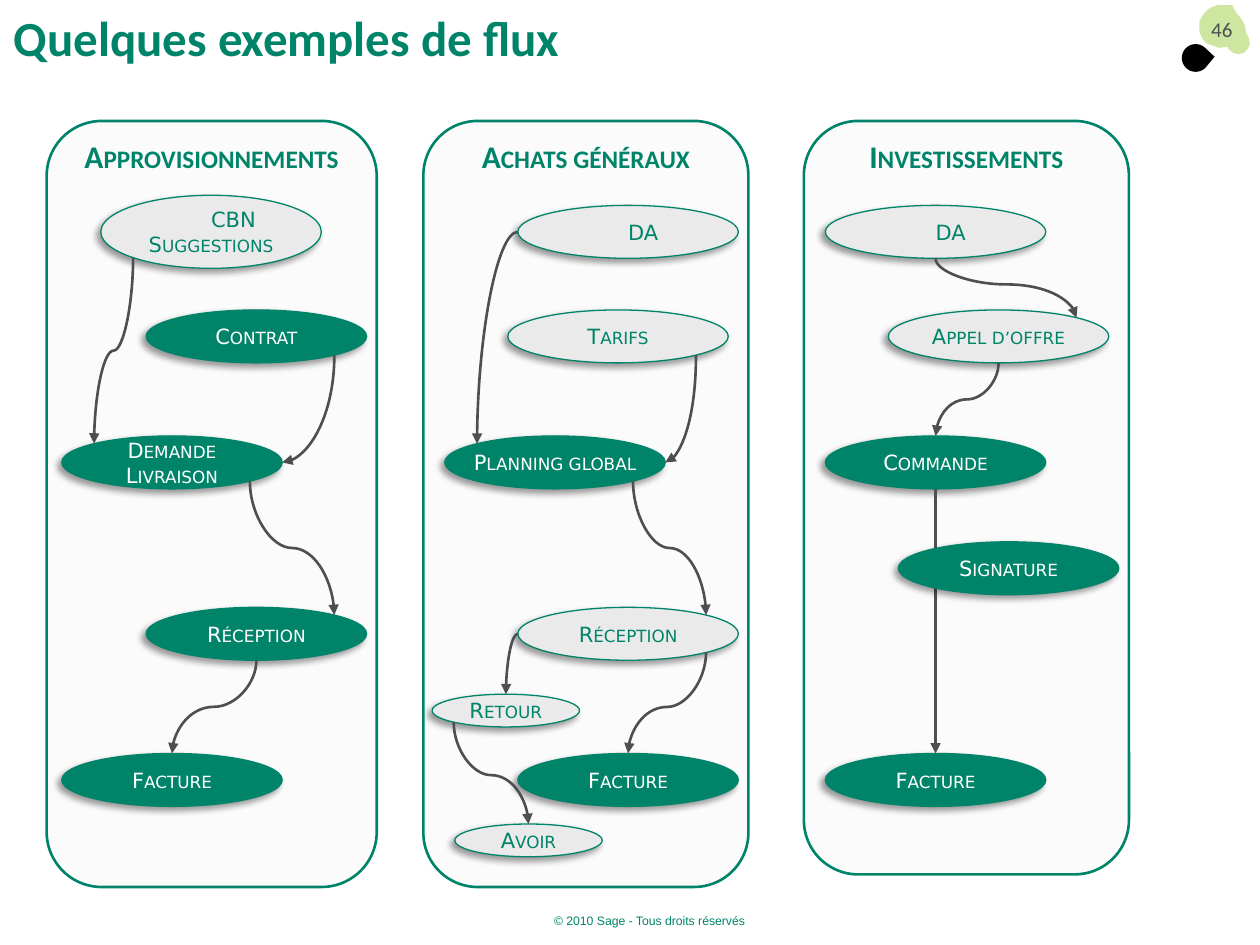
from math import cos, pi, sin, sqrt

from pptx import Presentation
from pptx.dml.color import RGBColor
from pptx.enum.shapes import MSO_CONNECTOR, MSO_SHAPE
from pptx.enum.text import MSO_ANCHOR, MSO_AUTO_SIZE, PP_ALIGN
from pptx.oxml import parse_xml
from pptx.oxml.ns import nsdecls, qn
from pptx.oxml.xmlchemy import OxmlElement
from pptx.util import Inches, Pt

COLORS = {"green": "008469", "slate": "4D4F53", "light": "EAEAEA",
          "lime": "CDE6A0", "white": "FFFFFF", "black": "000000"}
NODE_SIZE, SMALL_SIZE = (1.75, 0.42), (1.17, 0.26)
PANEL_TOP = 0.96

# Connection sites of an ellipse: index and direction from its centre
D = sqrt(0.5)
SITES = {"top": (0, 0, -1), "top left": (1, -D, -D), "left": (2, -1, 0),
         "bottom left": (3, -D, D), "bottom": (4, 0, 1),
         "bottom right": (5, D, D), "right": (6, 1, 0), "top right": (7, D, -D)}

# Panels: (left, width, height), steps (text, left, top, filled, size)
# and arrows (from, site, to, site, bend)
FLOWS = {
    "Approvisionnements": {
        "frame": (0.37, 2.62, 6.08),
        "steps": [("CBN\nSuggestions", 0.8, 1.55, False, (1.75, 0.58)),
                  ("Contrat", 1.16, 2.46, True, NODE_SIZE),
                  ("Demande\nLivraison", 0.49, 3.46, True, NODE_SIZE),
                  ("Réception", 1.16, 4.82, True, NODE_SIZE),
                  ("Facture", 0.49, 5.98, True, NODE_SIZE)],
        "arrows": [("Contrat", "bottom right", "Demande\nLivraison", "right", 0.5),
                   ("CBN\nSuggestions", "bottom left", "Demande\nLivraison", "top left", 0.5),
                   ("Demande\nLivraison", "bottom right", "Réception", "top right", 0.5),
                   ("Réception", "bottom", "Facture", "top", 0.5)],
    },
    "Achats généraux": {
        "frame": (3.36, 2.58, 6.08),
        "steps": [("DA", 4.11, 1.63, False, NODE_SIZE),
                  ("Tarifs", 4.03, 2.46, False, NODE_SIZE),
                  ("Planning global", 3.53, 3.46, True, NODE_SIZE),
                  ("Réception", 4.11, 4.82, False, NODE_SIZE),
                  ("Retour", 3.43, 5.51, False, SMALL_SIZE),
                  ("Facture", 4.11, 5.98, True, NODE_SIZE),
                  ("Avoir", 3.61, 6.54, False, SMALL_SIZE)],
        "arrows": [("DA", "left", "Planning global", "top left", 0.5),
                   ("Tarifs", "bottom right", "Planning global", "right", 0.5),
                   ("Planning global", "bottom right", "Réception", "top right", 0.5),
                   ("Réception", "bottom right", "Facture", "top", 0.54),
                   ("Réception", "left", "Retour", "top", 0.5),
                   ("Retour", "bottom left", "Avoir", "top", 0.52)],
    },
    "Investissements": {
        "frame": (6.38, 2.58, 5.98),
        "steps": [("DA", 6.55, 1.63, False, NODE_SIZE),
                  ("Appel d’offre", 7.05, 2.46, False, NODE_SIZE),
                  ("Commande", 6.55, 3.46, True, NODE_SIZE),
                  ("Facture", 6.55, 5.98, True, NODE_SIZE)],
        "arrows": [("DA", "bottom", "Appel d’offre", "top right", 0.44),
                   ("Appel d’offre", "bottom", "Commande", "top", 0.5),
                   ("Commande", "bottom", "Facture", "top", 0.5)],
    },
}

# Outline of the page-number blob
BLOB = [(9.91, 0.3), (9.89, 0.26), (9.88, 0.2), (9.86, 0.16), (9.82, 0.11),
        (9.8, 0.08), (9.78, 0.04), (9.72, 0.04), (9.66, 0.04), (9.61, 0.06),
        (9.57, 0.09), (9.54, 0.13), (9.52, 0.17), (9.52, 0.25), (9.54, 0.3),
        (9.57, 0.34), (9.62, 0.36), (9.68, 0.38), (9.74, 0.37), (9.76, 0.4),
        (9.79, 0.42), (9.83, 0.43), (9.87, 0.42), (9.9, 0.39), (9.92, 0.35)]


def rgb(color):
    return RGBColor.from_string(COLORS[color])


def write(shape, text, size, font, color, align, bold=False, small_caps=False):
    frame = shape.text_frame
    for i, line in enumerate(text.split("\n")):
        paragraph = frame.paragraphs[0] if i == 0 else frame.add_paragraph()
        paragraph.alignment = align
        run = paragraph.add_run()
        run.text = line
        run.font.size, run.font.name, run.font.bold = Pt(size), font, bold
        run.font.color.rgb = rgb(color)
        if small_caps:
            run.font._element.set("cap", "small")


def add_label(slide, box, text, size, font, color, align, anchor):
    label = slide.shapes.add_textbox(*map(Inches, box))
    label.text_frame.word_wrap = True
    label.text_frame.vertical_anchor = anchor
    write(label, text, size, font, color, align)


def add_outline(slide, points, color):
    corners = [(Inches(x), Inches(y)) for x, y in points]
    builder = slide.shapes.build_freeform(*corners[0])
    builder.add_line_segments(corners[1:], close=True)
    outline = builder.convert_to_shape()
    outline.shadow.inherit = False
    outline.fill.solid()
    outline.fill.fore_color.rgb = rgb(color)
    outline.line.fill.background()


def add_box(slide, kind, box, fill, line_width):
    shape = slide.shapes.add_shape(kind, *map(Inches, box))
    shape.shadow.inherit = False
    shape.fill.solid()
    shape.fill.fore_color.rgb = rgb(fill)
    shape.line.color.rgb = rgb("green")
    shape.line.width = Pt(line_width)
    shape.text_frame.word_wrap = False
    return shape


def add_panel(slide, title, left, width, height):
    panel = add_box(slide, MSO_SHAPE.ROUNDED_RECTANGLE,
                    (left, PANEL_TOP, width, height), "slate", 1.5)
    panel.adjustments[0] = 0.167
    alpha = OxmlElement("a:alpha")
    alpha.set("val", "2000")
    panel._element.spPr.find(qn("a:solidFill"))[0].append(alpha)
    frame = panel.text_frame
    frame.vertical_anchor = MSO_ANCHOR.TOP
    frame.margin_top = 0
    write(panel, title, 18, "Calibri", "green", PP_ALIGN.CENTER, True, True)


def add_step(slide, text, left, top, filled, size):
    step = add_box(slide, MSO_SHAPE.OVAL, (left, top, *size),
                   "green" if filled else "light", 0.75)
    step._element.spPr.find(qn("a:effectLst")).append(parse_xml(
        f'<a:outerShdw {nsdecls("a")} blurRad="{Pt(4)}" dist="{Pt(3)}" dir="8100000" '
        f'rotWithShape="0"><a:srgbClr val="{COLORS["black"]}">'
        '<a:alpha val="40000"/></a:srgbClr></a:outerShdw>'))
    step.text_frame.vertical_anchor = MSO_ANCHOR.MIDDLE
    write(step, text, 12, "DejaVu Sans", "white" if filled else "green",
          PP_ALIGN.CENTER, small_caps=True)
    return step


def site_point(step, site):
    _, dx, dy = SITES[site]
    return (step.left + step.width * (1 + dx) / 2,
            step.top + step.height * (1 + dy) / 2)


def add_arrow(slide, start, start_site, end, end_site, bend):
    (x1, y1), (x2, y2) = site_point(start, start_site), site_point(end, end_site)
    dx, dy = x2 - x1, y2 - y1
    straight = abs(dx) < Inches(0.01)
    leaves_sideways = start_site == "left"
    # A curve that leaves downwards is a horizontal one turned by a quarter
    width, height = abs(dx), abs(dy)
    if not straight and not leaves_sideways:
        width, height = height, width
    kind = MSO_CONNECTOR.STRAIGHT if straight else MSO_CONNECTOR.CURVE
    left, top = int((x1 + x2 - width) / 2), int((y1 + y2 - height) / 2)
    arrow = slide.shapes.add_connector(kind, left, top, left + int(width), top + int(height))
    properties = arrow._element.spPr
    if not straight:
        rotation, flip = (180, "flipV") if leaves_sideways else (
            (270, "flipH") if dx > 0 else (90, None))
        transform = properties.find(qn("a:xfrm"))
        transform.set("rot", str(rotation * 60000))
        if flip:
            transform.set(flip, "1")
        geometry = properties.find(qn("a:prstGeom"))
        if leaves_sideways or end_site == "right":
            geometry.set("prst", "curvedConnector2")
        else:
            guide = OxmlElement("a:gd")
            guide.set("name", "adj1")
            guide.set("fmla", f"val {round(bend * 100000)}")
            geometry.find(qn("a:avLst")).append(guide)
    arrow.line.color.rgb = rgb("slate")
    arrow.line.width = Pt(1.5)
    head = OxmlElement("a:tailEnd")
    head.set("type", "triangle")
    properties.find(qn("a:ln")).append(head)
    properties.append(OxmlElement("a:effectLst"))
    # Glue both ends to their steps
    links = arrow._element.nvCxnSpPr.find(qn("p:cNvCxnSpPr"))
    for tag, step, site in (("a:stCxn", start, start_site), ("a:endCxn", end, end_site)):
        link = OxmlElement(tag)
        link.set("id", str(step.shape_id))
        link.set("idx", str(SITES[site][0]))
        links.append(link)


def main():
    deck = Presentation()
    deck.slide_width, deck.slide_height = Inches(10), Inches(7.5)
    slide = deck.slides.add_slide(deck.slide_layouts[5])

    # Page number and footer
    add_outline(slide, BLOB, "lime")
    arc = [pi * (0.25 + 1.5 * i / 24) for i in range(25)]
    add_outline(slide, [(9.64, 0.45)] + [(9.49 + 0.11 * cos(a), 0.46 + 0.11 * sin(a))
                                         for a in arc], "black")
    add_label(slide, (8.94, 0.08, 0.94, 0.3), "46", 12, "Calibri", "slate",
              PP_ALIGN.RIGHT, MSO_ANCHOR.TOP)
    add_label(slide, (3.57, 7.11, 3.17, 0.4), "© 2010 Sage - Tous droits réservés", 7,
              "Arial", "green", PP_ALIGN.CENTER, MSO_ANCHOR.MIDDLE)

    # Title
    title = slide.shapes.title
    title.left, title.top, title.width, title.height = map(Inches, (0.01, 0.01, 7.65, 1.25))
    title.text_frame.vertical_anchor = MSO_ANCHOR.TOP
    title.text_frame.auto_size = MSO_AUTO_SIZE.NONE
    write(title, "Quelques exemples de flux", 28, "Calibri", "green", PP_ALIGN.LEFT, True)

    # Flows
    for name, flow in FLOWS.items():
        add_panel(slide, name, *flow["frame"])
        steps = {step[0]: add_step(slide, *step) for step in flow["steps"]}
        for start, start_site, end, end_site, bend in flow["arrows"]:
            add_arrow(slide, steps[start], start_site, steps[end], end_site, bend)

    # Signature lies over the arrow from order to invoice
    add_step(slide, "Signature", 7.13, 4.3, True, NODE_SIZE)
    deck.save("out.pptx")


if __name__ == "__main__":
    main()
